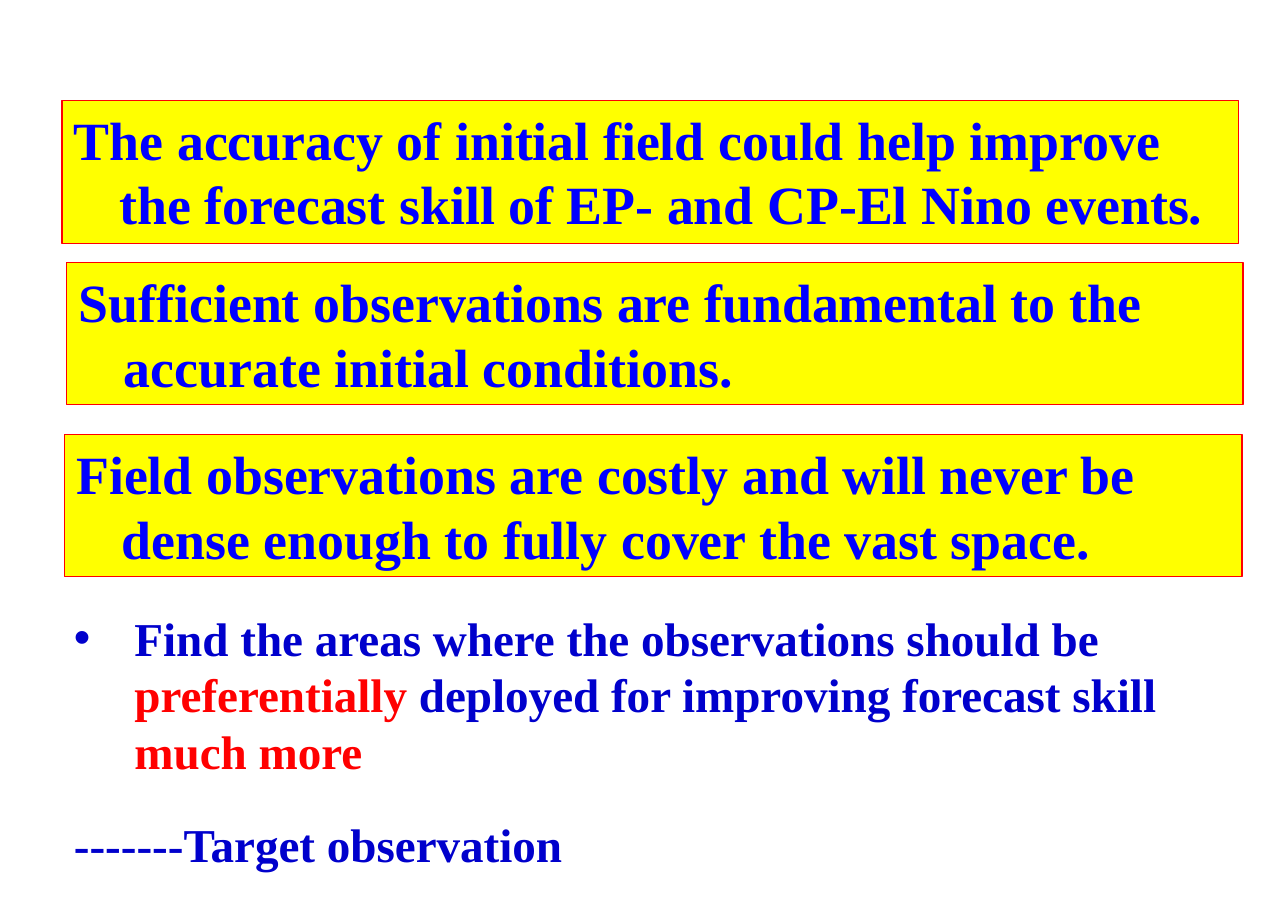
from pptx import Presentation
from pptx import util as u
from pptx.dml.color import RGBColor
from pptx.enum import shapes, text
from pptx.oxml.ns import qn
from lxml import etree

FONT = "Times New Roman"
COLORS = {"fill": "FFFF00", "edge": "FF0000", "claim": "0000FF",
          "body": "0000CC", "mark": "FF0000"}
CLAIMS = [
    ((1.3, 2.11, 24.66, 3), "The accuracy of initial field could help improve "
     "the forecast skill of EP- and CP-El Nino events."),
    ((1.4, 5.51, 24.66, 2.97), "Sufficient observations are fundamental to the "
     "accurate initial conditions."),
    ((1.35, 9.12, 24.69, 2.97), "Field observations are costly and will never be "
     "dense enough to fully cover the vast space."),
]
GOAL = [("Find the areas where the observations should be ", "body"),
        ("preferentially ", "mark"),
        ("deployed for improving forecast skill ", "body"),
        ("much more", "mark")]


def color(name):
    return RGBColor.from_string(COLORS[name])


def write(para, parts, size):
    for words, name in parts:
        run = para.add_run()
        run.text = words
        run.font.color.rgb = color(name)
    para.alignment = text.PP_ALIGN.LEFT
    para.font.name = FONT
    para.font.size = u.Pt(size)
    para.font.bold = True


def hang(para, depth, bullet=None):
    props = para._p.get_or_add_pPr()
    props.set("marL", str(u.Cm(depth)))
    props.set("indent", str(-u.Cm(depth)))
    if bullet:
        etree.SubElement(props, qn("a:buFont"), typeface="Arial")
        etree.SubElement(props, qn("a:buChar"), char=bullet)


def add_claim(slide, box, words):
    panel = slide.shapes.add_shape(shapes.MSO_SHAPE.RECTANGLE, *map(u.Cm, box))
    panel.shadow.inherit = False
    panel.fill.solid()
    panel.fill.fore_color.rgb = color("fill")
    panel.line.color.rgb = color("edge")
    panel.line.width = u.Pt(0.75)
    frame = panel.text_frame
    frame.word_wrap = True
    frame.vertical_anchor = text.MSO_ANCHOR.TOP
    para = frame.paragraphs[0]
    hang(para, 0.95)
    write(para, [(words, "claim")], 32)


def add_goal(slide, box):
    frame = slide.shapes.add_textbox(*map(u.Cm, box)).text_frame
    frame.word_wrap = True
    para = frame.paragraphs[0]
    hang(para, 1.27, "•")
    write(para, GOAL, 28)
    para = frame.add_paragraph()
    para.space_before = u.Pt(21.5)
    write(para, [("-------Target observation", "body")], 28)


def main():
    deck = Presentation()
    deck.slide_width, deck.slide_height = u.Cm(27), u.Cm(19)
    slide = deck.slides.add_slide(deck.slide_layouts[6])
    for box, words in CLAIMS:
        add_claim(slide, box, words)
    add_goal(slide, (1.3, 12.65, 25.25, 5.89))
    deck.save("out.pptx")


if __name__ == "__main__":
    main()
